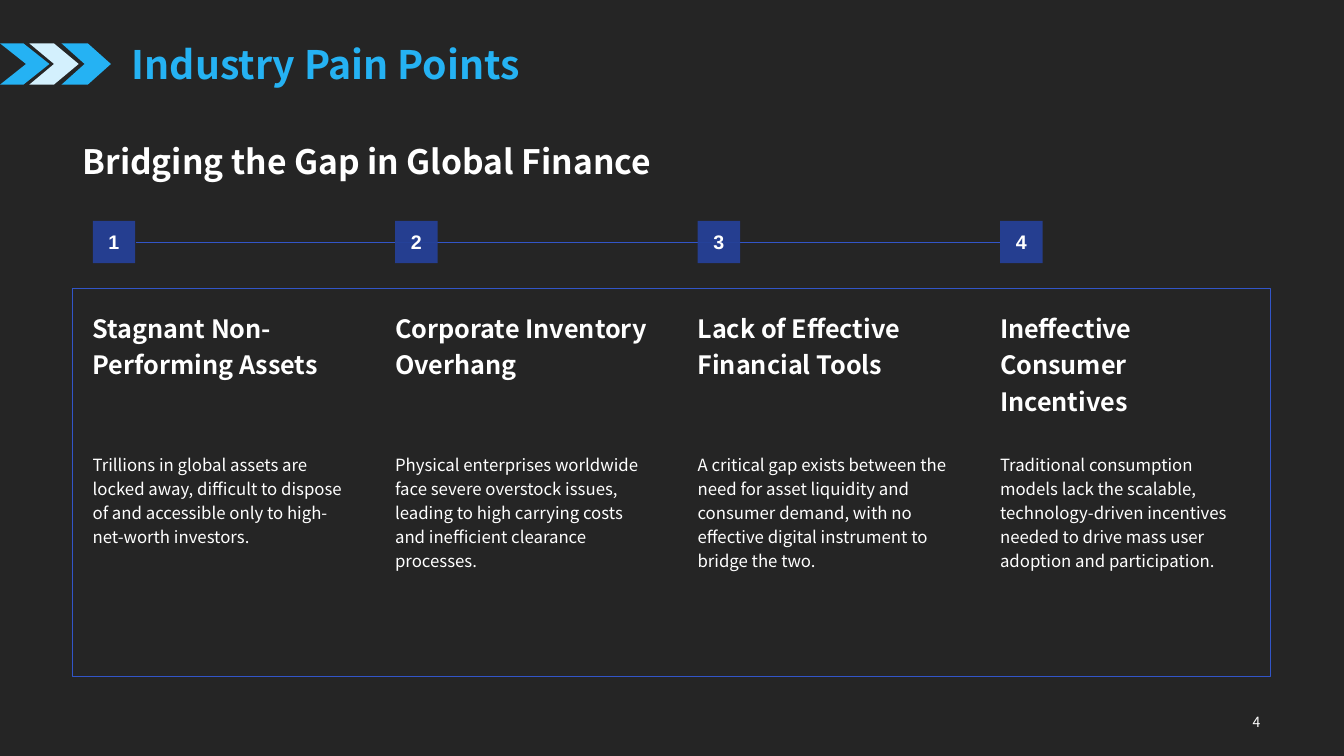
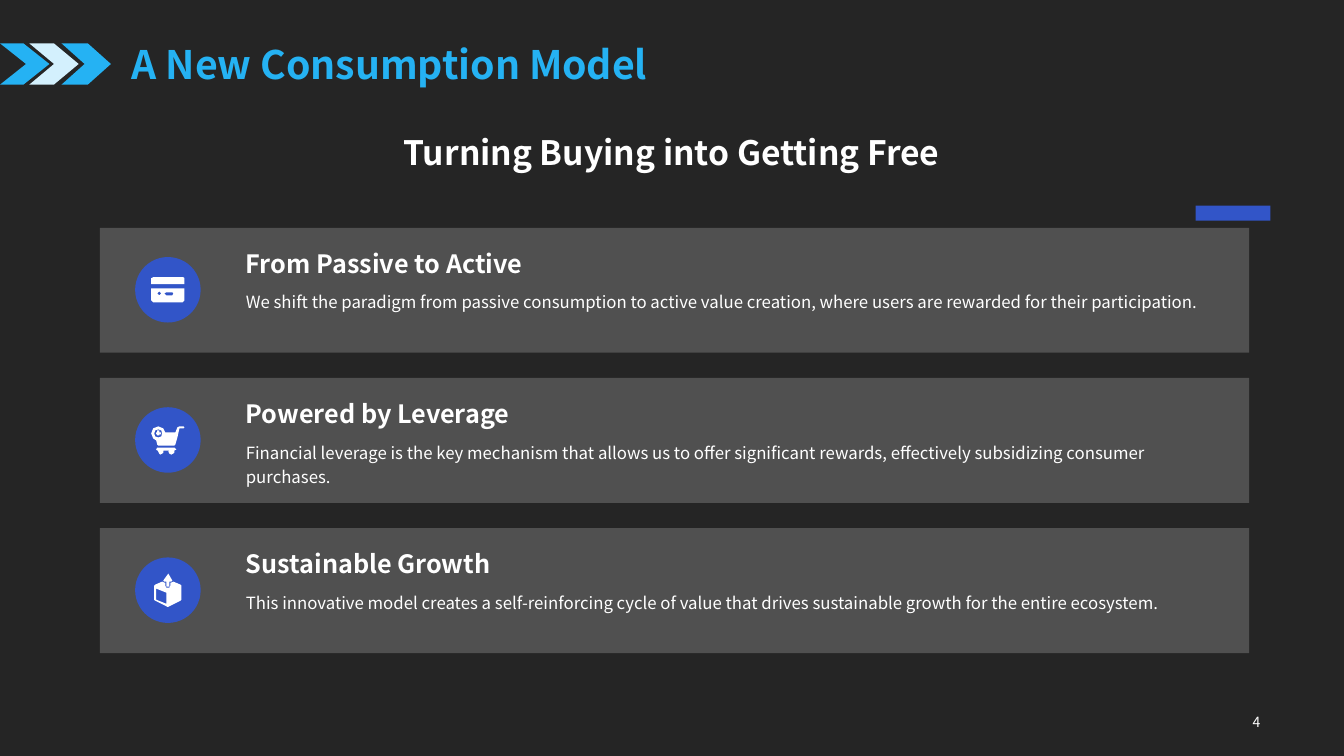
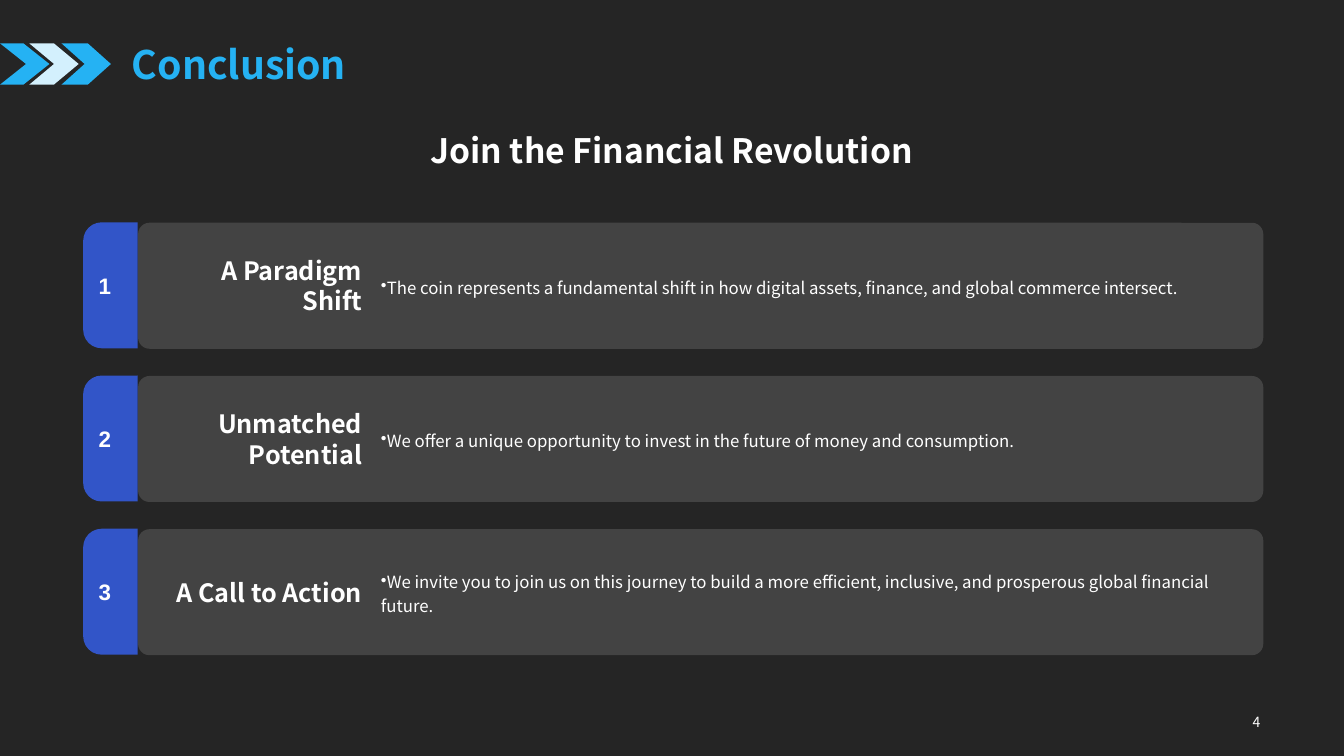
import pptx
import pptx.util
import pptx.dml.color
import pptx.enum.shapes
import pptx.enum.text
import pptx.oxml
import pptx.oxml.ns
import lxml.etree

RGB = pptx.dml.color.RGBColor
KIND = pptx.enum.shapes.MSO_SHAPE
ALIGN = pptx.enum.text.PP_ALIGN
ANCHOR = pptx.enum.text.MSO_ANCHOR
qn = pptx.oxml.ns.qn

PX = 9144
WIDE, HIGH = 1333, 750
SANS, ARIAL = "Noto Sans CJK SC", "Arial"
BACK = RGB(0x2F, 0x2F, 0x2F)
BLACK = RGB(0, 0, 0)
WHITE = RGB(0xFF, 0xFF, 0xFF)
PALE = RGB(0xF0, 0xF0, 0xF0)
SKY = RGB(0x25, 0xB2, 0xF3)
ICE = RGB(0xD3, 0xF0, 0xFD)
BLUE = RGB(0x32, 0x55, 0xC8)
NAVY = RGB(0x25, 0x40, 0x96)

ARROWS = [(61, 0.56, SKY), (29, 0.6, ICE), (0, 0.63, SKY)]

PAINS = [
    ("Stagnant Non-Performing Assets",
     "Trillions in global assets are locked away, difficult to dispose of and "
     "accessible only to high-net-worth investors."),
    ("Corporate Inventory Overhang",
     "Physical enterprises worldwide face severe overstock issues, leading to "
     "high carrying costs and inefficient clearance processes."),
    ("Lack of Effective Financial Tools",
     "A critical gap exists between the need for asset liquidity and consumer "
     "demand, with no effective digital instrument to bridge the two."),
    ("Ineffective Consumer Incentives",
     "Traditional consumption models lack the scalable, technology-driven "
     "incentives needed to drive mass user adoption and participation."),
]

CARD = [
    [(16, 21), (18, 20), (48, 20), (49, 21), (49, 27), (16, 27)],
    [(16, 31), (49, 31), (49, 43), (47, 45), (18, 45), (16, 43)],
    [(29, 36), (31, 35), (37, 35), (38, 36), (37, 38), (31, 38)],
    [(22, 36), (24, 34), (26, 36), (24, 38)],
]
CART = [
    [(22, 40), (39, 40), (41, 42), (39, 43), (39, 45), (38, 46), (36, 47),
     (34, 46), (33, 44), (34, 43), (28, 43), (28, 45), (27, 46), (25, 47),
     (24, 46), (23, 44), (23, 43), (22, 43), (21, 42)],
    [(22, 23), (24, 23), (24, 25), (26, 25), (26, 27), (24, 27), (24, 28),
     (22, 28), (22, 27), (21, 27), (21, 25), (22, 25)],
    [(23, 22), (26, 23), (27, 26), (26, 29), (23, 30), (20, 29), (19, 26),
     (20, 23)],
    [(44, 19), (48, 19), (49, 20), (48, 21), (44, 21), (42, 30), (40, 37),
     (39, 38), (23, 38), (22, 37), (21, 33), (18, 31), (16, 26), (18, 21),
     (23, 19), (28, 21), (30, 25), (40, 25), (42, 20)],
]
CRATE = [
    [(21, 31), (21, 42), (31, 46), (31, 35)],
    [(27, 24), (29, 25), (30, 25), (30, 28), (31, 30), (34, 30), (35, 28),
     (35, 25), (36, 25), (38, 24), (45, 27), (46, 28), (46, 42), (45, 43),
     (33, 49), (32, 49), (20, 43), (19, 42), (19, 28), (20, 27)],
    [(33, 16), (37, 23), (36, 24), (34, 24), (34, 29), (31, 29), (31, 24),
     (29, 24), (28, 23)],
]

MODEL = [
    ("From Passive to Active",
     "We shift the paradigm from passive consumption to active value creation, "
     "where users are rewarded for their participation.", CARD),
    ("Powered by Leverage",
     "Financial leverage is the key mechanism that allows us to offer "
     "significant rewards, effectively subsidizing consumer purchases.", CART),
    ("Sustainable Growth",
     "This innovative model creates a self-reinforcing cycle of value that "
     "drives sustainable growth for the entire ecosystem.", CRATE),
]

CALLS = [
    ("A Paradigm Shift",
     "The coin represents a fundamental shift in how digital assets, finance, and "
     "global commerce intersect."),
    ("Unmatched Potential",
     "We offer a unique opportunity to invest in the future of money and "
     "consumption."),
    ("A Call to Action",
     "We invite you to join us on this journey to build a more efficient, "
     "inclusive, and prosperous global financial future."),
]


def emu(box):
    return [n * PX for n in box]


def paint(shape, color, alpha=100):
    shape.shadow.inherit = False
    shape.line.fill.background()
    shape.fill.solid()
    shape.fill.fore_color.rgb = color
    if alpha < 100:
        tint = shape.fill._xPr.find(qn("a:solidFill"))[0]
        lxml.etree.SubElement(tint, qn("a:alpha")).set("val", str(alpha * 1000))


def block(slide, kind, box, color, alpha=100, adj=()):
    shape = slide.shapes.add_shape(kind, *emu(box))
    for i, n in enumerate(adj):
        shape.adjustments[i] = n
    paint(shape, color, alpha)
    return shape


def write(shape, words, size, bold=False, color=WHITE, font=SANS, align=ALIGN.LEFT,
          anchor=ANCHOR.TOP, space=None, bullet=None, wrap=True):
    frame = shape.text_frame
    frame.text = words
    frame.word_wrap = wrap
    frame.vertical_anchor = anchor
    para = frame.paragraphs[0]
    para.alignment = align
    if space:
        para.line_spacing = space
    if bullet:
        props = para._p.get_or_add_pPr()
        lxml.etree.SubElement(props, qn("a:buChar")).set("char", bullet)
    face = para.runs[0].font
    face.name, face.size, face.bold = font, pptx.util.Pt(size), bold
    face.color.rgb = color


def label(slide, box, words, size, **style):
    write(slide.shapes.add_textbox(*emu(box)), words, size, **style)


def icon(slide, left, top, rings):
    pen = slide.shapes.build_freeform(*rings[0][0], scale=PX)
    for ring in rings:
        pen.move_to(*ring[0])
        pen.add_line_segments(ring[1:], close=True)
    paint(pen.convert_to_shape(left * PX, top * PX), WHITE)


def start(deck, title):
    slide = deck.slides.add_slide(deck.slide_layouts[6])
    slide.background.fill.solid()
    slide.background.fill.fore_color.rgb = BACK
    block(slide, KIND.RECTANGLE, (0, 0, WIDE, HIGH), BLACK, 20)
    for left, adj, color in ARROWS:
        block(slide, KIND.CHEVRON, (left, 43, 49, 41), color, adj=[adj])
    label(slide, (860, 701, 400, 30), "4", 10, align=ALIGN.RIGHT, anchor=ANCHOR.MIDDLE)
    label(slide, (121, 14, 1139, 98), title, 28, bold=True, color=SKY,
          anchor=ANCHOR.MIDDLE)
    return slide


def pains(deck):
    slide = start(deck, "Industry Pain Points")
    label(slide, (72, 124, 1188, 71), "Bridging the Gap in Global Finance", 24,
          bold=True, anchor=ANCHOR.MIDDLE)
    rail = slide.shapes.add_connector(
        pptx.enum.shapes.MSO_CONNECTOR.STRAIGHT, *emu((135, 240, 992, 240)))
    rail.line.color.rgb = BLUE
    rail.line.width = pptx.util.Pt(0.5)
    lxml.etree.SubElement(rail._element.spPr, qn("a:effectLst"))
    panel = slide.shapes.add_shape(KIND.RECTANGLE, *emu((72, 286, 1188, 385)))
    panel.shadow.inherit = False
    panel.fill.background()
    panel.line.color.rgb = BLUE
    panel.line.width = pptx.util.Pt(1)
    for i, (head, body) in enumerate(PAINS):
        left = 82 + 300 * i
        mark = block(slide, KIND.RECTANGLE, (left + 10, 219, 42, 42), NAVY, 95)
        write(mark, str(i + 1), 14, bold=True, font=ARIAL, align=ALIGN.CENTER,
              anchor=ANCHOR.MIDDLE, wrap=False)
        label(slide, (left, 300, 270, 143), head, 18, bold=True, space=1.2)
        label(slide, (left, 442, 269, 220), body, 12, space=1.2)


def model(deck):
    slide = start(deck, "A New Consumption Model")
    label(slide, (72, 126, 1188, 62), "Turning Buying into Getting Free", 24,
          bold=True, align=ALIGN.CENTER)
    block(slide, KIND.RECTANGLE, (1186, 204, 74, 15), BLUE)
    for i, (head, body, rings) in enumerate(MODEL):
        top = 226 + 149 * i
        block(slide, KIND.RECTANGLE, (99, top, 1140, 124), WHITE, 20)
        label(slide, (234, top + 4, 1000, 51), head, 18, bold=True,
              anchor=ANCHOR.BOTTOM)
        label(slide, (234, top + 55, 1000, 69), body, 12, space=1.2)
        block(slide, KIND.OVAL, (134, top + 29, 65, 65), BLUE)
        icon(slide, 134, top + 29, rings)


def close(deck):
    slide = start(deck, "Conclusion")
    label(slide, (72, 124, 1188, 50), "Join the Financial Revolution", 24,
          bold=True, align=ALIGN.CENTER)
    for i, (head, body) in enumerate(CALLS):
        top = 221 + 152 * i
        block(slide, KIND.ROUNDED_RECTANGLE, (137, top, 1116, 125), PALE, 15, [0.09])
        tab = block(slide, KIND.ROUND_2_SAME_RECTANGLE, (47, top + 35, 125, 54),
                    BLUE, adj=[0.34, 0])
        tab.rotation = 270
        write(tab, str(i + 1), 16, bold=True, font=ARIAL, align=ALIGN.CENTER,
              anchor=ANCHOR.MIDDLE)
        tab._element.txBody.bodyPr.set("vert", "eaVert")
        label(slide, (148, top + 6, 221, 113), head, 18, bold=True,
              align=ALIGN.RIGHT, anchor=ANCHOR.MIDDLE)
        label(slide, (368, top + 6, 864, 113), body, 12, space=1.2, bullet="•",
              anchor=ANCHOR.MIDDLE)


def main():
    deck = pptx.Presentation()
    deck.slide_width, deck.slide_height = emu((WIDE, HIGH))
    for build in (pains, model, close):
        build(deck)
    deck.save("out.pptx")


if __name__ == "__main__":
    main()
